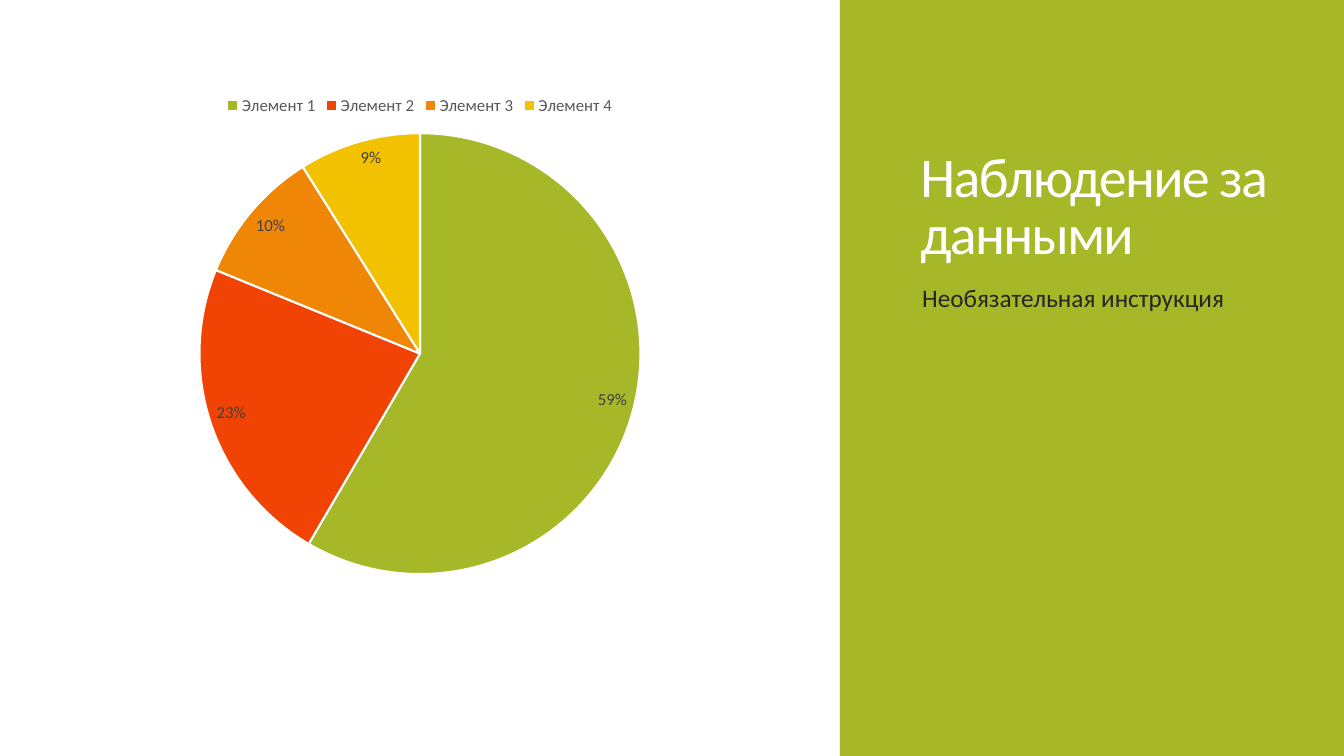
"""Build a slide with a pie chart beside a green title panel."""
from pptx import Presentation
from pptx.chart.data import CategoryChartData
from pptx.dml.color import RGBColor as RGB
from pptx.enum.chart import XL_CHART_TYPE as Kind, XL_LABEL_POSITION as Spot, XL_LEGEND_POSITION as Side
from pptx.enum.shapes import MSO_SHAPE as Shape
from pptx.enum.text import MSO_ANCHOR as Anchor
from pptx.util import Inches, Pt

HUES = {"green": "A6B727", "red": "F04304", "orange": "EF8606", "gold": "F2C100",
        "white": "FFFFFF", "ink": "262626", "label": "404040", "key": "595959"}
FACE = "Calibri"
COLS, ROWS = 16, 9

deck = Presentation()
deck.slide_width, deck.slide_height = Inches(13.33), Inches(7.5)
slide = deck.slides.add_slide(deck.slide_layouts[6])


def grid(col, row, wide, high):
    unit_x, unit_y = deck.slide_width / COLS, deck.slide_height / ROWS
    return [round(n) for n in (col * unit_x, row * unit_y, wide * unit_x, high * unit_y)]


def write(text, area, size, hue, anchor=Anchor.TOP, line=1.0, track=0):
    frame = slide.shapes.add_textbox(*grid(*area)).text_frame
    frame.word_wrap = True
    frame.vertical_anchor = anchor
    para = frame.paragraphs[0]
    para.line_spacing = line
    run = para.add_run()
    run.text = text
    run.font.name, run.font.size = FACE, Pt(size)
    run.font.color.rgb = RGB.from_string(HUES[hue])
    if track:
        run.font._element.set("spc", str(round(track * 100)))


panel = slide.shapes.add_shape(Shape.RECTANGLE, *grid(10, 0, 6, 9))
panel.shadow.inherit = False
panel.fill.solid()
panel.fill.fore_color.rgb = RGB.from_string(HUES["green"])
panel.line.fill.background()

write("Наблюдение за данными", (10.84, 0.71, 4.44, 2.52), 40, "white",
      anchor=Anchor.BOTTOM, line=0.85, track=-1.2)

data = CategoryChartData()
data.categories = [f"Элемент {n}" for n in range(1, 5)]
data.add_series("Series 1", (59, 23, 10, 9))
chart = slide.shapes.add_chart(Kind.PIE, *grid(1, 1, 8, 6), data).chart
chart.has_title = False
chart.font.name, chart.font.size = FACE, Pt(10)
chart.has_legend = True
chart.legend.position = Side.TOP
chart.legend.include_in_layout = False

plot = chart.plots[0]
plot.vary_by_categories = True
plot.has_data_labels = True
tags = plot.data_labels
tags.show_value = True
tags.number_format, tags.number_format_is_linked = '0"%"', False
tags.position = Spot.INSIDE_END
for font, hue in ((chart.legend.font, "key"), (tags.font, "label")):
    font.name, font.size = FACE, Pt(12)
    font.color.rgb = RGB.from_string(HUES[hue])

for n, hue in enumerate(("green", "red", "orange", "gold")):
    slice_ = plot.series[0].points[n].format
    slice_.fill.solid()
    slice_.fill.fore_color.rgb = RGB.from_string(HUES[hue])
    slice_.line.color.rgb = RGB.from_string(HUES["white"])
    slice_.line.width = Pt(1.5)

write("Необязательная инструкция", (10.86, 3.3, 4.46, 4.1), 18, "ink")

deck.save("out.pptx")
